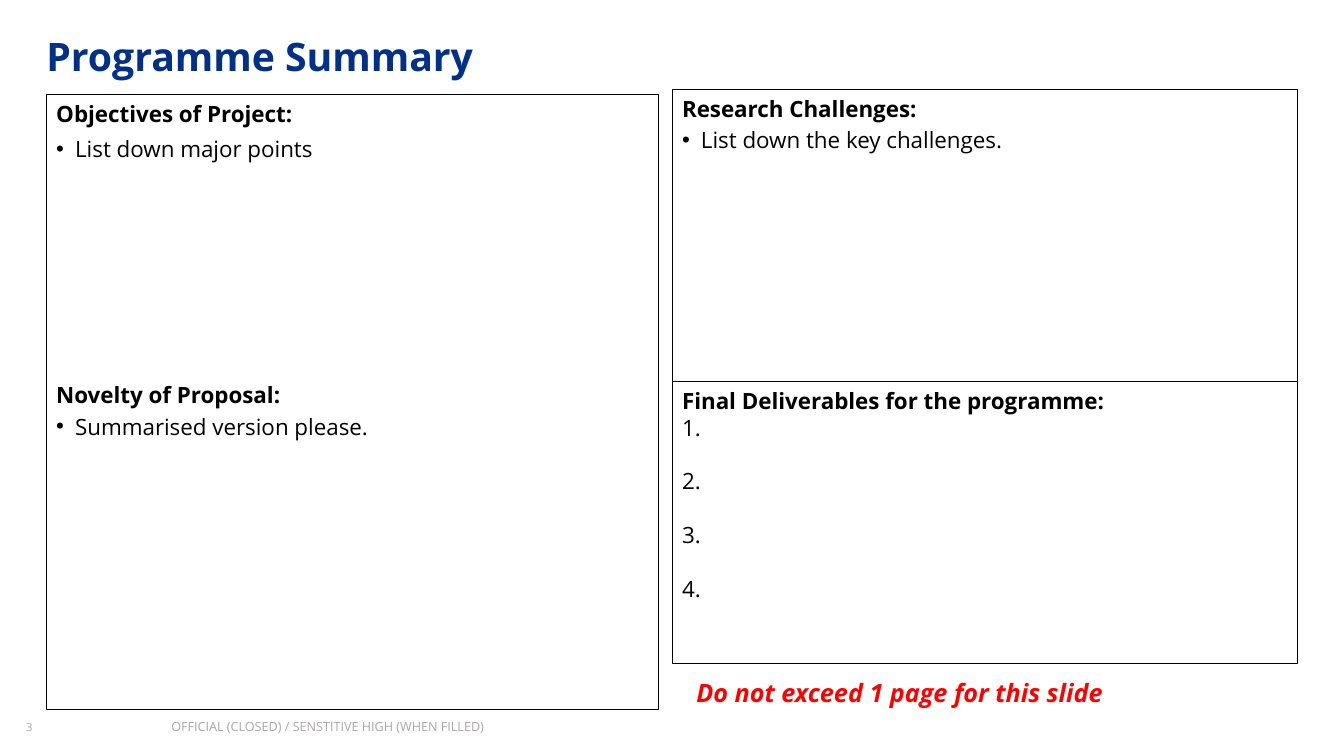
from dataclasses import dataclass

from pptx import Presentation
from pptx.dml.color import RGBColor
from pptx.enum.shapes import MSO_SHAPE
from pptx.enum.text import MSO_ANCHOR, PP_ALIGN
from pptx.oxml.ns import qn
from pptx.oxml.xmlchemy import OxmlElement
from pptx.util import Pt

RECTANGLE = MSO_SHAPE.RECTANGLE
TOP, LEFT = MSO_ANCHOR.TOP, PP_ALIGN.LEFT

FONT = "Open Sans"
BLACK, BLUE, RED, GREY = "000000", "003087", "FF0000", "767171"
INDENT = 13.5
INSET_X, INSET_Y = 7.2, 3.6
BODY_SIZE = 16
BODY_LINE = 19.15  # drawn height of one body line
SMALL_GAP, WIDE_GAP = 0.2 * BODY_SIZE, 0.4 * BODY_SIZE
NOVELTY_GAP = 156.55  # writing room left under the objectives


@dataclass
class Line:
    text: str
    bold: bool = False
    bullet: bool = False
    before: float = 0
    size: float = BODY_SIZE
    colour: str = BLACK
    italic: bool = False
    spacing: float = 1.0
    opacity: float = 1.0


@dataclass
class Block:
    left: float
    top: float
    width: float
    height: float
    lines: list[Line]
    framed: bool = False
    inset_x: float = 0
    inset_y: float = 0
    wrap: bool = True


def rgb(colour: str) -> RGBColor:
    return RGBColor.from_string(colour)


def set_attributes(target, values: dict) -> None:
    for name, value in values.items():
        setattr(target, name, value)


def add_bullet(paragraph) -> None:
    properties = paragraph._p.get_or_add_pPr()
    properties.set("marL", str(Pt(INDENT)))
    properties.set("indent", str(-Pt(INDENT)))
    for tag, name, value in (("a:buFont", "typeface", "Arial"), ("a:buChar", "char", "•")):
        element = OxmlElement(tag)
        element.set(name, value)
        properties.append(element)


def write_line(paragraph, line: Line) -> None:
    if line.bullet:
        add_bullet(paragraph)
    set_attributes(paragraph, {
        "alignment": LEFT,
        "space_before": Pt(line.before),
        "line_spacing": line.spacing,
    })
    run = paragraph.add_run()
    run.text = line.text
    set_attributes(run.font, {
        "name": FONT,
        "size": Pt(line.size),
        "bold": line.bold,
        "italic": line.italic,
    })
    run.font.color.rgb = rgb(line.colour)
    if line.opacity < 1:
        alpha = OxmlElement("a:alpha")
        alpha.set("val", str(round(line.opacity * 100000)))
        run._r.find(".//" + qn("a:srgbClr")).append(alpha)


def draw_block(slide, block: Block) -> None:
    bounds = [Pt(value) for value in (block.left, block.top, block.width, block.height)]
    if block.framed:
        shape = slide.shapes.add_shape(RECTANGLE, *bounds)
        shape.shadow.inherit = False
        shape.fill.background()
        shape.line.color.rgb = rgb(BLACK)
        shape.line.width = Pt(0.75)
    else:
        shape = slide.shapes.add_textbox(*bounds)
    frame = shape.text_frame
    set_attributes(frame, {
        "word_wrap": block.wrap,
        "vertical_anchor": TOP,
        "margin_left": Pt(block.inset_x),
        "margin_right": Pt(block.inset_x),
        "margin_top": Pt(block.inset_y),
        "margin_bottom": Pt(block.inset_y),
    })
    for index, line in enumerate(block.lines):
        paragraph = frame.add_paragraph() if index else frame.paragraphs[0]
        write_line(paragraph, line)


def panel(left: float, top: float, width: float, height: float, lines: list[Line]) -> Block:
    return Block(left, top, width, height, lines, True, INSET_X, INSET_Y)


# Slide content
OBJECTIVES = [
    Line("Objectives of Project:", bold=True),
    Line("List down major points", bullet=True, before=WIDE_GAP),
    Line("Novelty of Proposal:", bold=True, before=NOVELTY_GAP),
    Line("Summarised version please.", bullet=True, before=SMALL_GAP),
]
CHALLENGES = [
    Line("Research Challenges:", bold=True),
    Line("List down the key challenges.", bullet=True, before=SMALL_GAP),
]
DELIVERABLES = [Line("Final Deliverables for the programme:", bold=True)] + [
    Line(f"{number}.", before=BODY_LINE if number > 1 else 0) for number in range(1, 5)
]
TITLE = Line("Programme Summary", bold=True, size=28, colour=BLUE, spacing=1.1)
WARNING = Line("Do not exceed 1 page for this slide", bold=True, italic=True, size=18, colour=RED)
PAGE_NUMBER = Line("3", size=8, colour=GREY, spacing=1.1, opacity=0.61)
CLASSIFICATION = Line("OFFICIAL (CLOSED) / SENSTITIVE HIGH (WHEN FILLED)",
                      size=9, colour=GREY, opacity=0.61)

RIGHT_X, RIGHT_WIDTH = 480.1, 447
CHALLENGES_Y, CHALLENGES_HEIGHT = 64.2, 208.6
FOOTER_Y, FOOTER_HEIGHT = 513.4, 13.7

BLOCKS = [
    Block(18.7, FOOTER_Y, 57, FOOTER_HEIGHT, [PAGE_NUMBER]),
    Block(33.1, 19.4, 860, 37.5, [TITLE]),
    panel(33.1, 67.7, 437, 439.2, OBJECTIVES),
    panel(RIGHT_X, CHALLENGES_Y, RIGHT_WIDTH, CHALLENGES_HEIGHT, CHALLENGES),
    panel(RIGHT_X, CHALLENGES_Y + CHALLENGES_HEIGHT, RIGHT_WIDTH, 201, DELIVERABLES),
    Block(490.3, 480.2, 308, 29, [WARNING], False, INSET_X, INSET_Y, False),
    Block(122.4, FOOTER_Y, 384, FOOTER_HEIGHT, [CLASSIFICATION]),
]


def main() -> None:
    presentation = Presentation()
    presentation.slide_width, presentation.slide_height = Pt(960), Pt(540)
    slide = presentation.slides.add_slide(presentation.slide_layouts[6])
    for block in BLOCKS:
        draw_block(slide, block)
    presentation.save("out.pptx")


if __name__ == "__main__":
    main()
